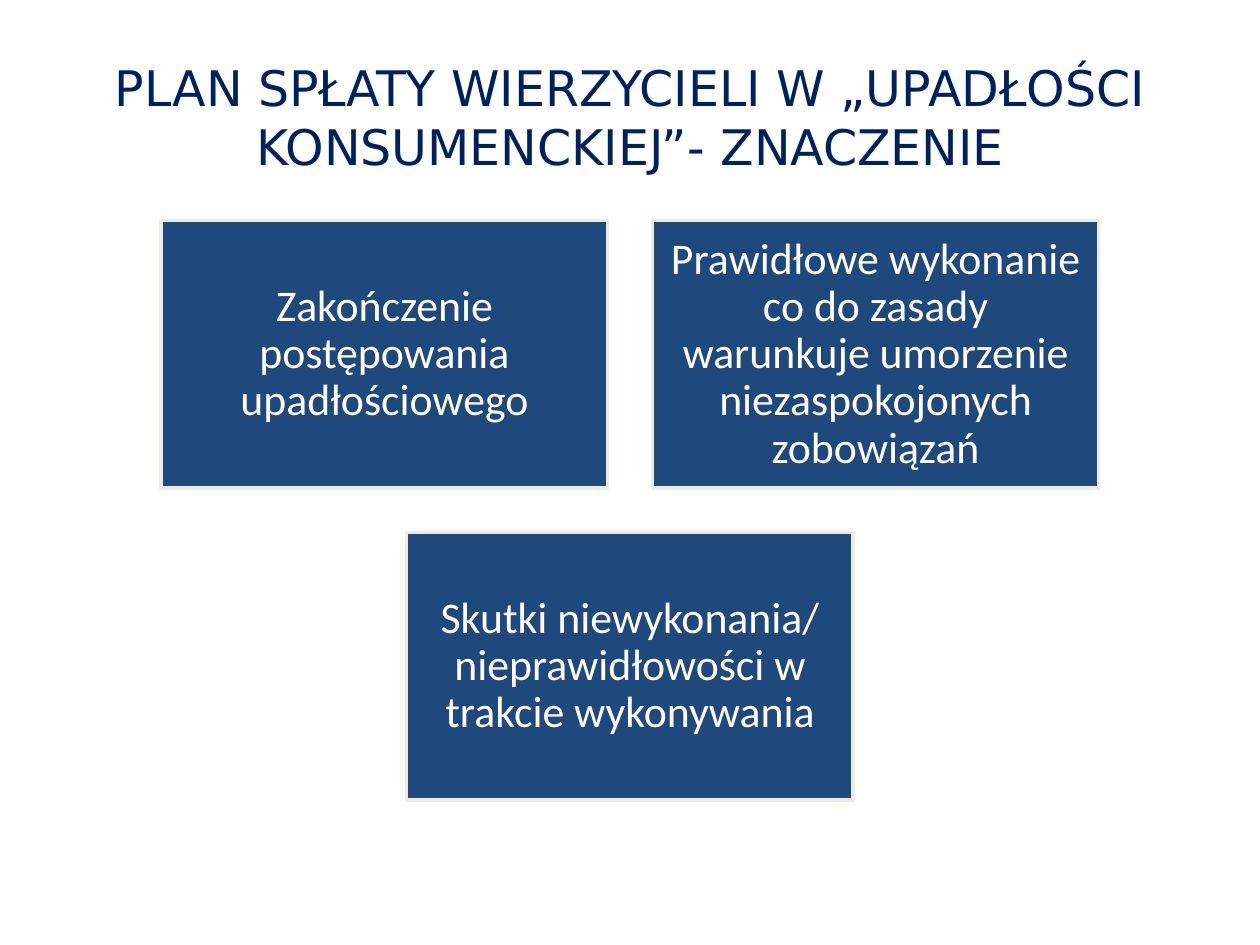
from pptx import Presentation
from pptx.dml.color import RGBColor
from pptx.enum import shapes, text
from pptx.util import Cm, Pt

COLORS = {"title": "002060", "box": "1F497D", "border": "EEECE1", "label": "FFFFFF"}
TITLE = "PLAN SPŁATY WIERZYCIELI W „UPADŁOŚCI KONSUMENCKIEJ”- ZNACZENIE"
ROWS = [
    ["Zakończenie postępowania upadłościowego",
     "Prawidłowe wykonanie co do zasady warunkuje umorzenie "
     "niezaspokojonych zobowiązań"],
    ["Skutki niewykonania/ nieprawidłowości w trakcie wykonywania"],
]


def color(name):
    return RGBColor.from_string(COLORS[name])


def write(frame, words, font, size, color_name):
    """Fill a frame with one centred, vertically centred paragraph."""
    frame.word_wrap = True
    frame.auto_size = text.MSO_AUTO_SIZE.NONE
    frame.vertical_anchor = text.MSO_ANCHOR.MIDDLE
    para = frame.paragraphs[0]
    para.alignment = text.PP_ALIGN.CENTER
    span = para.add_run()
    span.text = words
    span.font.name = font
    span.font.size = Pt(size)
    span.font.color.rgb = color(color_name)
    return para


def add_title(page, left, top, width, height):
    title = page.shapes.title
    title.left, title.top = Cm(left), Cm(top)
    title.width, title.height = Cm(width), Cm(height)
    write(title.text_frame, TITLE, "DejaVu Sans", 28, "title")


def add_box(page, words, left, top, width, height):
    box = page.shapes.add_shape(shapes.MSO_SHAPE.RECTANGLE,
                                Cm(left), Cm(top), Cm(width), Cm(height))
    box.shadow.inherit = False
    box.fill.solid()
    box.fill.fore_color.rgb = color("box")
    box.line.color.rgb = color("border")
    box.line.width = Pt(2)
    frame = box.text_frame
    frame.margin_left = frame.margin_right = Cm(0.25)
    frame.margin_top = frame.margin_bottom = Cm(0.25)
    para = write(frame, words, "Calibri", 25, "label")
    para.line_spacing = 0.9


def add_box_grid(page, left, top, width, box_width=9, box_height=5.39, gap=0.9):
    """Stack rows of equal boxes, each row centred in the region."""
    for row, labels in enumerate(ROWS):
        row_width = len(labels) * (box_width + gap) - gap
        row_left = left + (width - row_width) / 2
        for column, words in enumerate(labels):
            add_box(page, words, row_left + column * (box_width + gap),
                    top + row * (box_height + gap), box_width, box_height)


def main():
    deck = Presentation()
    deck.slide_width, deck.slide_height = Cm(25.4), Cm(19.05)
    page = deck.slides.add_slide(deck.slide_layouts[5])
    # Heading
    add_title(page, 1.27, 0.76, 22.86, 3.18)
    # Three statements
    add_box_grid(page, 1.27, 4.45, 22.86)
    deck.save("out.pptx")


if __name__ == "__main__":
    main()
